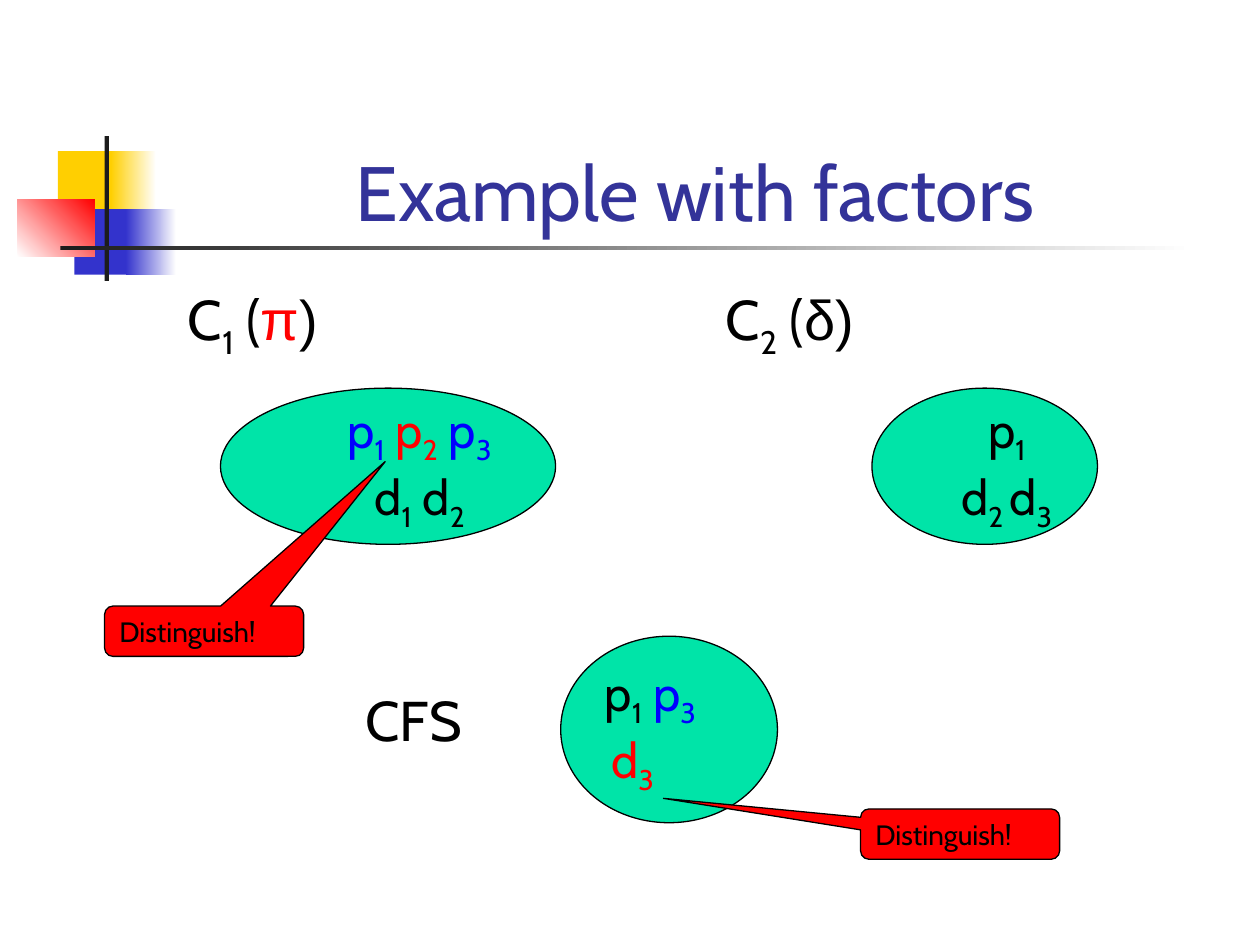
from dataclasses import dataclass

from lxml import etree
from pptx import Presentation
from pptx.dml.color import RGBColor
from pptx.enum.shapes import MSO_SHAPE
from pptx.enum.text import MSO_ANCHOR, MSO_AUTO_SIZE, PP_ALIGN
from pptx.oxml.ns import qn
from pptx.util import Inches, Pt

RECTANGLE, ELLIPSE = MSO_SHAPE.RECTANGLE, MSO_SHAPE.OVAL
CALLOUT = MSO_SHAPE.ROUNDED_RECTANGULAR_CALLOUT
LEFT, CENTER = PP_ALIGN.LEFT, PP_ALIGN.CENTER
TOP, MIDDLE, BOTTOM = MSO_ANCHOR.TOP, MSO_ANCHOR.MIDDLE, MSO_ANCHOR.BOTTOM
NO_AUTOFIT = MSO_AUTO_SIZE.NONE

SLIDE_WIDTH, SLIDE_HEIGHT = Inches(10), Inches(7.5)
COLORS = {
    "black": "000000", "white": "FFFFFF", "red": "FF0000", "blue": "0000FF",
    "green": "00E4A8", "title": "333399", "yellow": "FFCF01",
    "indigo": "3333CC", "charcoal": "1C1C1C",
}


@dataclass
class Box:
    """Left, top, width and height in percent of the slide's size."""
    left: float
    top: float
    width: float
    height: float

    def place(self) -> tuple:
        return (
            int(SLIDE_WIDTH * self.left / 100), int(SLIDE_HEIGHT * self.top / 100),
            int(SLIDE_WIDTH * self.width / 100), int(SLIDE_HEIGHT * self.height / 100),
        )


@dataclass
class Piece:
    text: str
    color: str = "black"
    font: str = "Cabin"
    subscript: bool = False


@dataclass
class Bar:
    box: Box
    colors: tuple
    angle: float = 0


@dataclass
class FactorSet:
    box: Box
    lines: list
    indent: float = 0
    centered: bool = True


@dataclass
class Note:
    box: Box
    tip: tuple


def symbol(letter: str, index: str, color: str = "black") -> list:
    """A letter with its subscript index."""
    return [Piece(letter, color), Piece(index, color, subscript=True)]


BARS = [
    Bar(Box(4.6, 16, 4.8, 6.93), ("yellow",)),
    Bar(Box(8.8, 16, 3.6, 6.93), ("yellow", "white")),
    Bar(Box(5.9, 22.13, 4.6, 6.93), ("indigo",)),
    Bar(Box(10, 22.13, 4, 6.93), ("indigo", "white")),
    Bar(Box(1.4, 21.07, 6.1, 6.13), ("white", "red"), 45),
    Bar(Box(8.3, 14.4, 0.35, 15.33), ("charcoal",)),
    Bar(Box(4.8, 26, 90, 0.45), ("charcoal", "white")),
]
FACTOR_SETS = [
    FactorSet(Box(44.5, 67.33, 17.2, 19.73), [
        symbol("p", "1") + symbol(" p", "3", "blue"),
        [Piece(" ", subscript=True)] + symbol("d", "3", "red"),
    ], centered=False),
    FactorSet(Box(17.5, 41.07, 26.6, 16.53), [
        symbol("p", "1", "blue") + symbol(" p", "2", "red") + symbol(" p", "3", "blue"),
        symbol("d", "1") + symbol(" d", "2"),
    ], indent=0.5),
    FactorSet(Box(69.2, 41.07, 17.9, 16.53), [
        symbol("p", "1"),
        symbol("d", "2 ") + symbol("d", "3"),
    ], indent=0.35),
]
NOTES = [
    Note(Box(8.3, 64.13, 15.8, 5.33), (0.91, -3.37)),
    Note(Box(68.3, 85.6, 15.8, 5.33), (-1.49, -0.71)),
]
FIRST_HEADING = [
    *symbol("C", "1"), Piece(" ("), Piece("π", "red", "Arial"), Piece(")", font="Arial"),
]
SECOND_HEADING = [*symbol("C", "2"), Piece(" ("), Piece("δ)", font="Arial")]


def rgb(name: str) -> RGBColor:
    return RGBColor.from_string(COLORS[name])


def write(frame, lines: list, *, size: float, align=LEFT, anchor=MIDDLE, wrap=True) -> None:
    frame.auto_size = NO_AUTOFIT
    frame.word_wrap = wrap
    frame.vertical_anchor = anchor
    for number, pieces in enumerate(lines):
        paragraph = frame.paragraphs[0] if number == 0 else frame.add_paragraph()
        paragraph.alignment = align
        for piece in pieces:
            run = paragraph.add_run()
            run.text = piece.text
            run.font.size = Pt(size)
            run.font.name = piece.font
            run.font.color.rgb = rgb(piece.color)
            if piece.subscript:
                run.font._element.set("baseline", "-25000")


def indent(paragraph, inches: float) -> None:
    properties = paragraph._p.get_or_add_pPr()
    properties.set("marL", str(Inches(inches)))
    properties.set("indent", "0")


def add_shape(slide, kind, box: Box, fill: str, outline: bool = True):
    shape = slide.shapes.add_shape(kind, *box.place())
    shape.shadow.inherit = False
    shape.fill.solid()
    shape.fill.fore_color.rgb = rgb(fill)
    if outline:
        shape.line.color.rgb = rgb("black")
        shape.line.width = Pt(0.75)
    else:
        shape.line.fill.background()
    return shape


def add_bar(slide, bar: Bar) -> None:
    shape = add_shape(slide, RECTANGLE, bar.box, bar.colors[0], outline=False)
    if len(bar.colors) > 1:
        shape.fill.gradient()
        shape.fill.gradient_angle = bar.angle
        for position, (stop, color) in enumerate(zip(shape.fill.gradient_stops, bar.colors)):
            stop.position = position
            stop.color.rgb = rgb(color)


def add_factor_set(slide, factors: FactorSet) -> None:
    frame = add_shape(slide, ELLIPSE, factors.box, "green").text_frame
    write(frame, factors.lines, size=28, wrap=not factors.centered,
          align=CENTER if factors.centered else LEFT)
    for paragraph in frame.paragraphs:
        indent(paragraph, factors.indent)


def add_note(slide, note: Note) -> None:
    shape = add_shape(slide, CALLOUT, note.box, "red")
    shape.adjustments[0], shape.adjustments[1] = note.tip
    write(shape.text_frame, [[Piece("Distinguish!")]], size=16)


def write_headings(shape, box: Box, lines: list) -> None:
    """Unbulleted headings, the second one lower and further right."""
    shape.left, shape.top, shape.width, shape.height = box.place()
    frame = shape.text_frame
    frame.margin_left = Inches(0.2)
    write(frame, lines, size=32, anchor=TOP)
    for paragraph, gap, left in zip(frame.paragraphs, (6.4, 185.5), (0, 1.41)):
        paragraph.space_before = Pt(gap)
        indent(paragraph, left)
        etree.SubElement(paragraph._p.pPr, qn("a:buNone"))


def add_headings(slide) -> None:
    title, body = slide.placeholders
    title.left, title.top, title.width, title.height = Box(12.6, 9.07, 85.2, 16.67).place()
    write(title.text_frame, [[Piece("Example with factors", "title")]],
          size=44, align=CENTER, anchor=BOTTOM)
    write_headings(body, Box(12.9, 29.47, 42, 60), [FIRST_HEADING, [Piece("CFS")]])
    box = Box(55.6, 29.47, 30, 10)
    write_headings(slide.shapes.add_textbox(*box.place()), box, [SECOND_HEADING])


def main() -> None:
    presentation = Presentation()
    presentation.slide_width, presentation.slide_height = SLIDE_WIDTH, SLIDE_HEIGHT
    slide = presentation.slides.add_slide(presentation.slide_layouts[1])
    add_headings(slide)
    for bar in BARS:
        add_bar(slide, bar)
    for factors in FACTOR_SETS:
        add_factor_set(slide, factors)
    for note in NOTES:
        add_note(slide, note)
    presentation.save("out.pptx")


if __name__ == "__main__":
    main()
